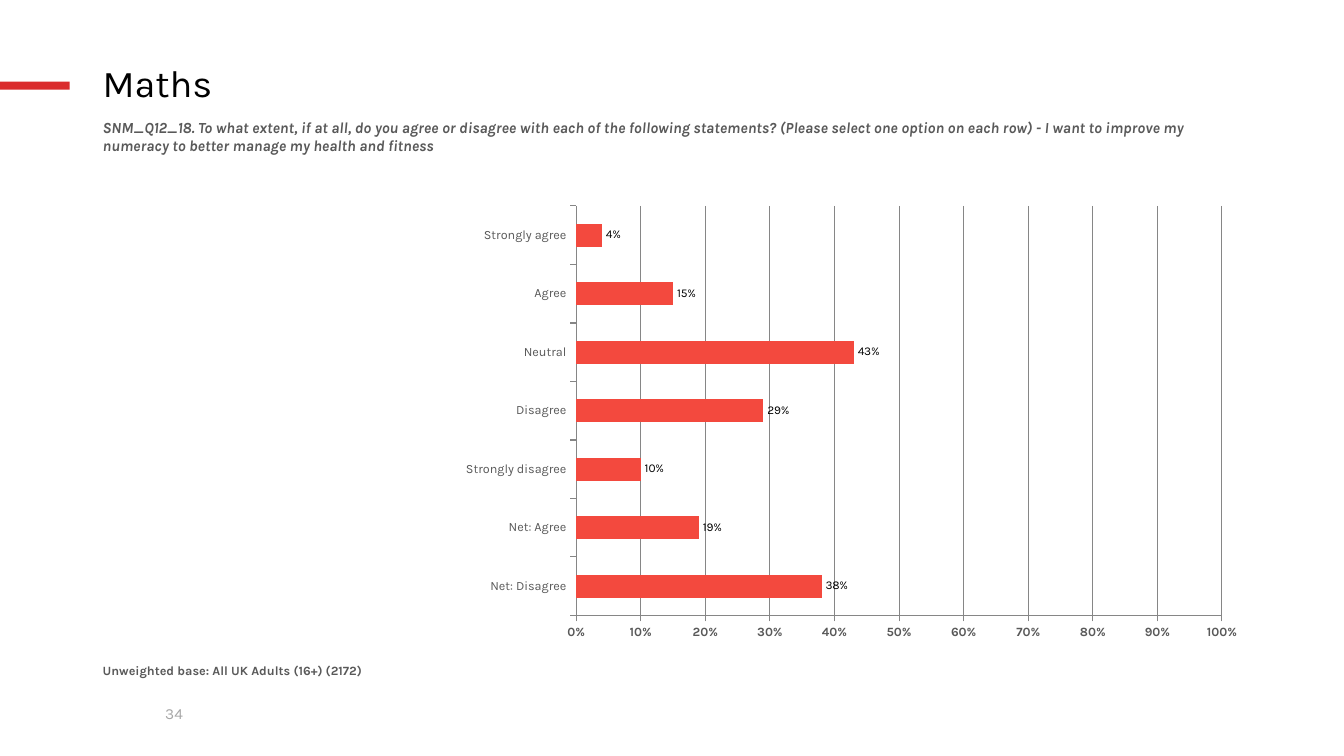
from dataclasses import dataclass

from pptx import Presentation
from pptx.chart.data import CategoryChartData
from pptx.dml.color import RGBColor
from pptx.enum.chart import XL_CHART_TYPE, XL_LABEL_POSITION, XL_TICK_LABEL_POSITION, XL_TICK_MARK
from pptx.enum.shapes import MSO_SHAPE
from pptx.enum.text import MSO_ANCHOR
from pptx.oxml import parse_xml
from pptx.oxml.ns import nsdecls, qn
from pptx.util import Inches, Pt

SLIDE_WIDTH, SLIDE_HEIGHT = Inches(13.33), Inches(7.5)
COLUMN, ROW = SLIDE_WIDTH / 100, SLIDE_HEIGHT / 100
MARGIN, CONTENT_WIDTH = 6.9, 86.27
FONT = "Karla"
COLOURS = {
    "accent": "DA2C2D",
    "bar": "F3493E",
    "black": "000000",
    "body": "595959",
    "page": "A6A6A6",
    "grid": "868686",
}


@dataclass(frozen=True)
class Area:
    """A place on the slide, in hundredths of its width and height."""
    left: float
    top: float
    width: float
    height: float

    def lengths(self) -> tuple[int, int, int, int]:
        return (round(self.left * COLUMN), round(self.top * ROW),
                round(self.width * COLUMN), round(self.height * ROW))


@dataclass(frozen=True)
class Caption:
    wording: str
    area: Area
    size: float
    colour: str
    bold: bool = False
    italic: bool = False
    anchor: MSO_ANCHOR = MSO_ANCHOR.TOP
    line_spacing: float = 1.0


CAPTIONS = [
    Caption("34", Area(11.55, 92.53, 5.1, 3.87), 11, "page"),
    Caption("Maths", Area(MARGIN, 7.87, CONTENT_WIDTH, 6.8), 27, "black",
            anchor=MSO_ANCHOR.MIDDLE, line_spacing=0.9),
    Caption("SNM_Q12_18. To what extent, if at all, do you agree or disagree with each of the "
            "following statements? (Please select one option on each row) - I want to improve "
            "my numeracy to better manage my health and fitness",
            Area(MARGIN, 14.93, CONTENT_WIDTH, 8.8), 11, "body", bold=True, italic=True),
    Caption("Unweighted base: All UK Adults (16+) (2172)",
            Area(MARGIN, 87.07, CONTENT_WIDTH, 5.73), 9, "body", bold=True),
]
ACCENT_AREA = Area(0, 10.8, 5.18, 1.07)
CHART_AREA = Area(MARGIN, 25.2, CONTENT_WIDTH, 60.4)
PLOT_SHARES = {"x": 0.417, "y": 0.034, "w": 0.557, "h": 0.897}
RESPONSES = {
    "Net: Disagree": 0.38,
    "Net: Agree": 0.19,
    "Strongly disagree": 0.1,
    "Disagree": 0.29,
    "Neutral": 0.43,
    "Agree": 0.15,
    "Strongly agree": 0.04,
}


def rgb(name: str) -> RGBColor:
    return RGBColor.from_string(COLOURS[name])


def set_font(font, size: float, colour: str, bold: bool = False, italic: bool = False) -> None:
    font.name, font.size = FONT, Pt(size)
    font.bold, font.italic = bold, italic
    font.color.rgb = rgb(colour)


def add_caption(slide, caption: Caption) -> None:
    frame = slide.shapes.add_textbox(*caption.area.lengths()).text_frame
    frame.word_wrap = True
    frame.vertical_anchor = caption.anchor
    paragraph = frame.paragraphs[0]
    paragraph.text = caption.wording
    paragraph.line_spacing = caption.line_spacing
    set_font(paragraph.font, caption.size, caption.colour, caption.bold, caption.italic)


def add_accent(slide) -> None:
    accent = slide.shapes.add_shape(MSO_SHAPE.RECTANGLE, *ACCENT_AREA.lengths())
    accent.shadow.inherit = False
    accent.fill.solid()
    accent.fill.fore_color.rgb = rgb("accent")
    accent.line.fill.background()


def place_plot(chart) -> None:
    """Fix the inner plot area at its shares of the chart."""
    plot_area = chart.plots[0]._element.getparent()
    for layout in plot_area.findall(qn("c:layout")):
        plot_area.remove(layout)
    modes = "".join(f'<c:{side}Mode val="edge"/>' for side in "xy")
    shares = "".join(f'<c:{side} val="{share}"/>' for side, share in PLOT_SHARES.items())
    plot_area.insert(0, parse_xml(
        f'<c:layout {nsdecls("c")}><c:manualLayout><c:layoutTarget val="inner"/>'
        f'{modes}{shares}</c:manualLayout></c:layout>'))


def style_axis(axis, bold: bool) -> None:
    axis.tick_label_position = XL_TICK_LABEL_POSITION.LOW
    axis.major_tick_mark = XL_TICK_MARK.OUTSIDE
    axis.minor_tick_mark = XL_TICK_MARK.NONE
    axis.format.line.color.rgb = rgb("grid")
    axis.format.line.width = Pt(0.75)
    set_font(axis.tick_labels.font, 9, "body", bold)


def add_response_chart(slide) -> None:
    responses = CategoryChartData(number_format="0%")
    responses.categories = list(RESPONSES)
    responses.add_series("Series 1", list(RESPONSES.values()))
    chart = slide.shapes.add_chart(
        XL_CHART_TYPE.BAR_CLUSTERED, *CHART_AREA.lengths(), responses).chart
    chart.has_legend = chart.has_title = False
    set_font(chart.font, 18, "black")
    place_plot(chart)

    style_axis(chart.category_axis, bold=False)
    share_axis = chart.value_axis
    style_axis(share_axis, bold=True)
    share_axis.minimum_scale, share_axis.maximum_scale = 0, 1
    share_axis.major_unit = 0.1
    share_axis.tick_labels.number_format = "0%"
    share_axis.tick_labels.number_format_is_linked = False
    share_axis.has_major_gridlines = True
    share_axis.major_gridlines.format.line.color.rgb = rgb("grid")
    share_axis.major_gridlines.format.line.width = Pt(0.75)

    bars = chart.plots[0]
    bars.vary_by_categories = False
    bars.gap_width, bars.overlap = 150, -10
    bar_fill = bars.series[0].format.fill
    bar_fill.solid()
    bar_fill.fore_color.rgb = rgb("bar")
    labels = bars.series[0].data_labels
    labels.show_value = True
    labels.position = XL_LABEL_POSITION.OUTSIDE_END
    labels.number_format = "0%"
    labels.number_format_is_linked = False
    set_font(labels.font, 8.5, "black")


def main() -> None:
    presentation = Presentation()
    presentation.slide_width, presentation.slide_height = SLIDE_WIDTH, SLIDE_HEIGHT
    slide = presentation.slides.add_slide(presentation.slide_layouts[6])
    add_accent(slide)
    for caption in CAPTIONS:
        add_caption(slide, caption)
    add_response_chart(slide)
    presentation.save("out.pptx")


if __name__ == "__main__":
    main()
